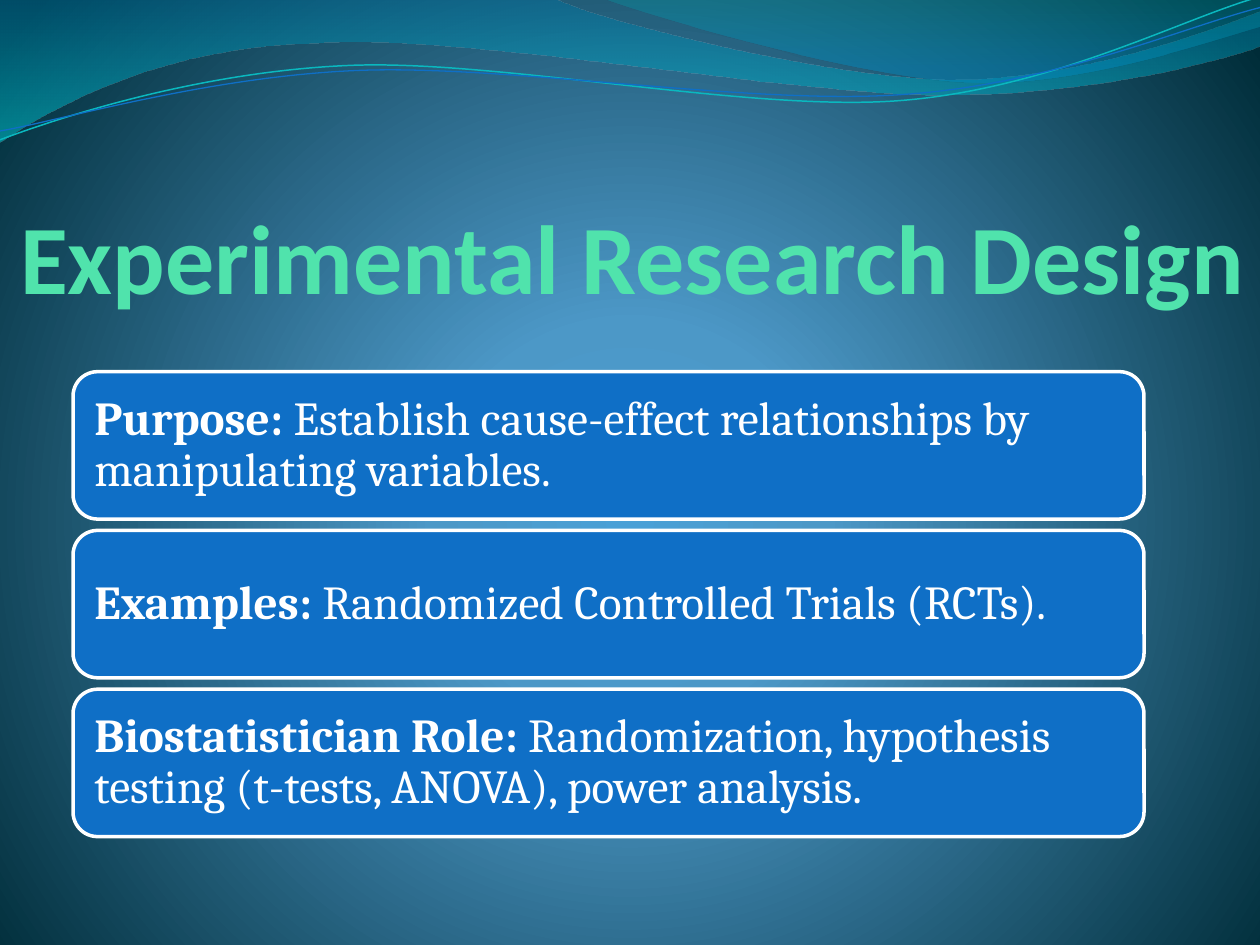
import pptx
import pptx.util
import pptx.dml.color
import pptx.enum.shapes
import pptx.enum.text
import pptx.oxml
import pptx.oxml.ns

Inches = pptx.util.Inches
Pt = pptx.util.Pt
RGB = pptx.dml.color.RGBColor
Anchor = pptx.enum.text.MSO_ANCHOR
Align = pptx.enum.text.PP_ALIGN
qn = pptx.oxml.ns.qn
SPACE = pptx.oxml.ns.nsdecls("a")

WHITE = RGB(0xFF, 0xFF, 0xFF)
BLUE = RGB(0x0F, 0x6F, 0xC6)
TEAL = RGB(0x0A, 0xB8, 0xBF)
MINT = RGB(0x50, 0xE3, 0xAC)
SKY = RGB(0x4A, 0xA0, 0xD6)
STEEL = RGB(0x4C, 0x98, 0xC7)
NIGHT = RGB(0x00, 0x2C, 0x38)
OCEAN = RGB(0x00, 0x74, 0xA1)
AQUA = RGB(0x00, 0xC6, 0xCF)
SEA = RGB(0x00, 0xA1, 0xA9)
AZURE = RGB(0x00, 0x8B, 0xBF)

TITLE = "Experimental Research Design"
CARDS = [
    ("Purpose:", " Establish cause-effect relationships by manipulating variables."),
    ("Examples:", " Randomized Controlled Trials (RCTs)."),
    ("Biostatistician Role:",
     " Randomization, hypothesis testing (t-tests, ANOVA), power analysis."),
]

GLOW = '<a:path path="circle"><a:fillToRect l="10000" t="110000" r="10000" b="100000"/></a:path>'
DOWN = '<a:lin ang="5400000" scaled="0"/>'
BACK = [(0, SKY, 100), (25, STEEL, 100), (100, NIGHT, 100)]

WAVES = [
    ([(0, 0), (4.4, -0.01), (4.76, 0.17, 6.64, 0.63, 7.58, 0.63),
      (8.53, 0.63, 9.58, 0.26, 10, 0.09), (10.01, 0.36),
      (9.83, 0.44, 8.7, 0.76, 7.46, 0.75), (6.22, 0.75, 3.82, 0.28, 2.57, 0.34),
      (1.29, 0.36, 0.46, 0.83, -0.01, 1.13)],
     [(0, OCEAN, 45), (100, AQUA, 55)]),
    ([(4.79, -0.01), (5.09, 0.11, 6.82, 0.62, 7.69, 0.65),
      (8.56, 0.69, 9.61, 0.32, 10, 0.21), (10, 0)],
     [(0, SEA, 30), (80, AZURE, 45)]),
]
LINES = [
    ([(0, 1.11), (0.48, 0.93, 1.58, 0.57, 2.77, 0.52),
      (3.95, 0.47, 5.93, 0.89, 7.13, 0.8), (8.33, 0.71, 9.38, 0.15, 9.98, -0.02)],
     TEAL, 0.85),
    ([(0, 1.04), (0.47, 0.96, 1.64, 0.61, 2.83, 0.56),
      (4.03, 0.51, 5.97, 0.84, 7.17, 0.75), (8.36, 0.67, 9.41, 0.21, 10, 0.06)],
     BLUE, 0.75),
]


def blend(owner, root, stops, shade):
    owner.fill.solid()
    marks = "".join(
        f'<a:gs pos="{pos * 1000}"><a:srgbClr val="{tint}">'
        f'<a:alpha val="{alpha * 1000}"/></a:srgbClr></a:gs>'
        for pos, tint, alpha in stops)
    grad = pptx.oxml.parse_xml(
        f'<a:gradFill {SPACE} rotWithShape="1">'
        f'<a:gsLst>{marks}</a:gsLst>{shade}</a:gradFill>')
    flat = root.find(".//" + qn("a:solidFill"))
    flat.getparent().replace(flat, grad)


def draw(slide, parts, close):
    ends = [(Inches(part[-2]), Inches(part[-1])) for part in parts]
    pen = slide.shapes.build_freeform(*ends[0])
    pen.add_line_segments(ends[1:], close=close)
    shape = pen.convert_to_shape()
    shape.shadow.inherit = False
    edges = list(shape._element.iter(qn("a:lnTo")))
    for edge, part in zip(edges, parts[1:]):
        if len(part) == 6:
            dots = "".join(
                f'<a:pt x="{Inches(x) - shape.left}" y="{Inches(y) - shape.top}"/>'
                for x, y in zip(part[::2], part[1::2]))
            bend = pptx.oxml.parse_xml(f'<a:cubicBezTo {SPACE}>{dots}</a:cubicBezTo>')
            edge.getparent().replace(edge, bend)
    return shape


def write(para, text, font, size, tint, bold):
    run = para.add_run()
    run.text = text
    run.font.name = font
    run.font.size = Pt(size)
    run.font.color.rgb = tint
    run.font.bold = bold


def pad(frame, side, anchor):
    frame.margin_left = frame.margin_right = side
    frame.margin_top = frame.margin_bottom = side
    frame.vertical_anchor = anchor
    frame.word_wrap = True
    frame.auto_size = pptx.enum.text.MSO_AUTO_SIZE.NONE
    para = frame.paragraphs[0]
    para.alignment = Align.LEFT
    return para


def main():
    deck = pptx.Presentation()
    deck.slide_width, deck.slide_height = Inches(10), Inches(7.5)
    slide = deck.slides.add_slide(deck.slide_layouts[5])
    blend(slide.background, slide._element, BACK, GLOW)

    for parts, stops in WAVES:
        wave = draw(slide, parts, True)
        wave.line.fill.background()
        blend(wave, wave._element, stops, DOWN)
    for parts, tint, width in LINES:
        curve = draw(slide, parts, False)
        curve.fill.background()
        curve.line.color.rgb = tint
        curve.line.width = Pt(width)

    title = slide.shapes.title
    title.left, title.top = Inches(0.16), Inches(1)
    title.width, title.height = Inches(10.09), Inches(1.49)
    para = pad(title.text_frame, 0, Anchor.BOTTOM)
    write(para, TITLE, "Calibri", 56, MINT, True)

    for row, (label, body) in enumerate(CARDS):
        card = slide.shapes.add_shape(
            pptx.enum.shapes.MSO_SHAPE.ROUNDED_RECTANGLE,
            Inches(0.58), Inches(2.95 + 1.26 * row), Inches(8.5), Inches(1.17))
        card.shadow.inherit = False
        card.fill.solid()
        card.fill.fore_color.rgb = BLUE
        card.line.color.rgb = WHITE
        card.line.width = Pt(2)
        para = pad(card.text_frame, Pt(8.1), Anchor.MIDDLE)
        para.line_spacing = 0.9
        write(para, label, "Cambria", 27, WHITE, True)
        write(para, body, "Cambria", 27, WHITE, False)

    deck.save("out.pptx")


if __name__ == "__main__":
    main()
